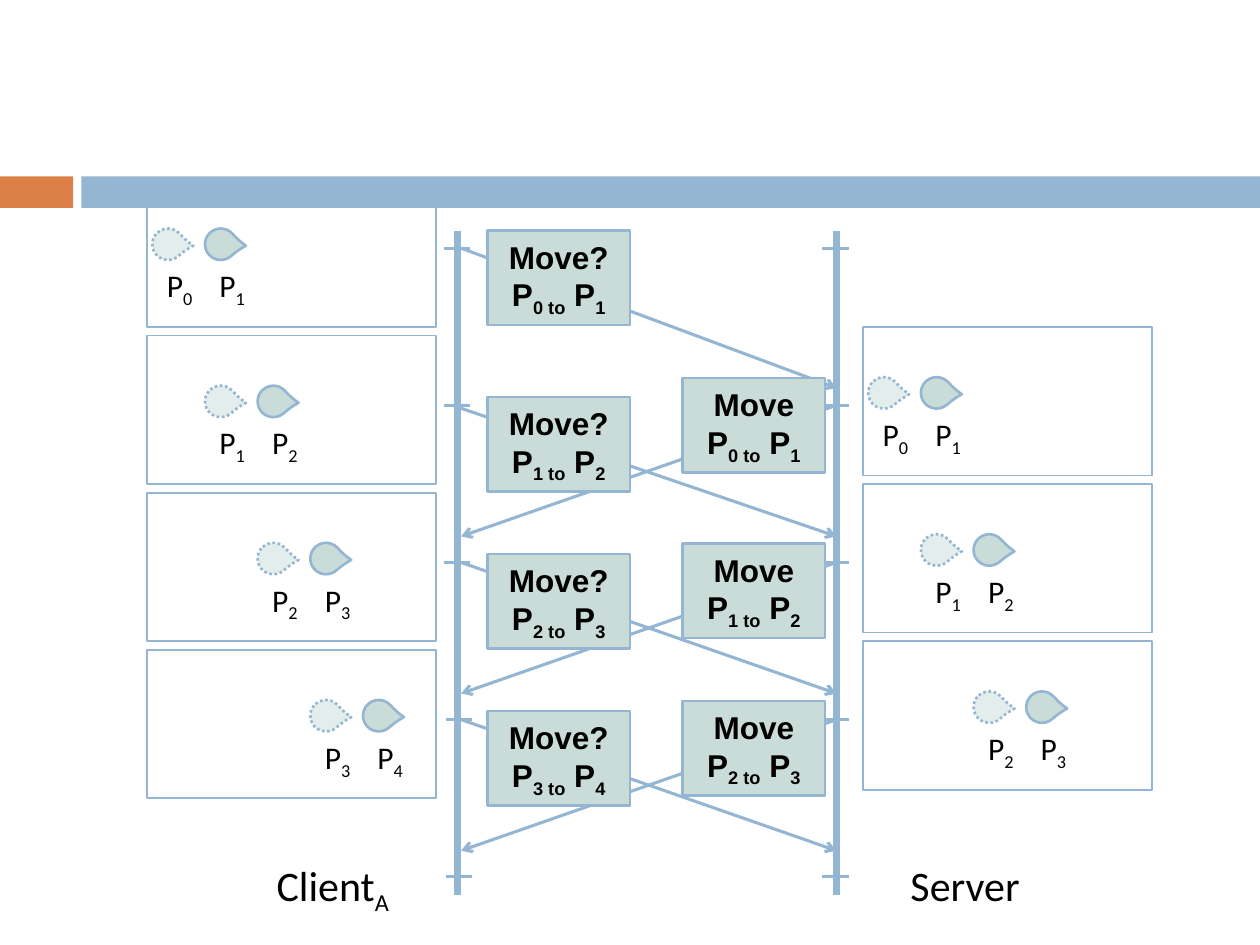
from lxml import etree
from pptx import Presentation
from pptx.dml.color import RGBColor
from pptx.enum.dml import MSO_LINE
from pptx.enum.shapes import MSO_CONNECTOR, MSO_SHAPE
from pptx.enum.text import MSO_ANCHOR, PP_ALIGN
from pptx.oxml.ns import qn
from pptx.util import Pt

RECTANGLE, TEARDROP = MSO_SHAPE.RECTANGLE, MSO_SHAPE.TEAR
STRAIGHT = MSO_CONNECTOR.STRAIGHT
DOTTED = MSO_LINE.ROUND_DOT
CENTER, MIDDLE = PP_ALIGN.CENTER, MSO_ANCHOR.MIDDLE

BLUE = RGBColor(0x94, 0xB6, 0xD2)
ORANGE = RGBColor(0xDD, 0x80, 0x47)
MINT = RGBColor(0xCA, 0xDC, 0xD8)
BLACK = RGBColor(0, 0, 0)

PITCH = 89.8          # time between two ticks
FIRST_TICK = 141.8
CLIENT_X, SERVER_X = 261.7, 478
STEP = 30.1           # distance of one move inside a panel

deck = Presentation()
deck.slide_width, deck.slide_height = Pt(720), Pt(540)
page = deck.slides.add_slide(deck.slide_layouts[6])


def write(para, parts, size, font, bold=False):
    """Write the parts in turn as normal text and subscript."""
    for index, part in enumerate(parts):
        span = para.add_run()
        span.text = part
        span.font.size, span.font.name = Pt(size), font
        span.font.bold, span.font.color.rgb = bold, BLACK
        if index % 2:
            span._r.get_or_add_rPr().set("baseline", "-25000")


def draw_line(x1, y1, x2, y2, width=1.75, arrow=False):
    line = page.shapes.add_connector(STRAIGHT, Pt(x1), Pt(y1), Pt(x2), Pt(y2))
    line.line.color.rgb, line.line.width = BLUE, Pt(width)
    if arrow:
        etree.SubElement(line.line._get_or_add_ln(), qn("a:tailEnd"), type="arrow")
    etree.SubElement(line._element.spPr, qn("a:effectLst"))


# Title bars
for left, width, color in ((0, 41.8, ORANGE), (46.5, 673.5, BLUE)):
    bar = page.shapes.add_shape(RECTANGLE, Pt(left), Pt(100.8), Pt(width), Pt(18))
    bar.shadow.inherit = False
    bar.fill.solid()
    bar.fill.fore_color.rgb = color
    bar.line.fill.background()

# Captions
for left, parts in ((135.4, ("Client", "A")), (496.8, ("Server",))):
    caption = page.shapes.add_textbox(Pt(left), Pt(487.4), Pt(109.4), Pt(36.7))
    caption.text_frame.word_wrap = True
    para = caption.text_frame.paragraphs[0]
    para.alignment = CENTER
    write(para, parts, 24, "Calibri")

# Time lines, each of two overlapping halves, with ticks
for x, tick_lefts in ((CLIENT_X, (253.7, 253.7, 253.7, 254.7, 254.7)),
                      (SERVER_X, (470,) * 5)):
    for top in (131.8, 311.8):
        draw_line(x, top, x, top + 199.4, width=4)
    for row, left in enumerate(tick_lefts):
        y = FIRST_TICK + row * PITCH
        draw_line(left, y, left + 15, y)

# Requests to the server and replies to the client
for row, (start, drop) in enumerate(((263.5, 79.9), (258.5, 74.9),
                                     (263.5, 74.9), (263.5, 74.9))):
    y = FIRST_TICK + row * PITCH
    draw_line(start, y, SERVER_X, y + drop, arrow=True)
for row in (1, 2, 3):
    y = FIRST_TICK + row * PITCH
    draw_line(SERVER_X, y, 263.5, y + 74.9, arrow=True)

# Message boxes
for word, left, tops in (("Move?", 278.6, (131.8, 226.8, 316.6, 406.3)),
                         ("Move", 390.1, (216, 310.7, 400.5))):
    for move, top in enumerate(tops):
        box = page.shapes.add_shape(RECTANGLE, Pt(left), Pt(top), Pt(81.4), Pt(54))
        box.shadow.inherit = False
        box.fill.solid()
        box.fill.fore_color.rgb = MINT
        box.line.color.rgb, box.line.width = BLUE, Pt(1.5)
        frame = box.text_frame
        frame.word_wrap, frame.vertical_anchor = True, MIDDLE
        lines = ((word,), ("P", f"{move} to", " P", f"{move + 1}"))
        for para, parts in zip((frame.paragraphs[0], frame.add_paragraph()), lines):
            para.alignment = CENTER
            write(para, parts, 18, "Arial", bold=True)

# Panels: old position dotted, new position solid
for left, first_top, count in ((84.1, 102, 4), (493.2, 186.9, 3)):
    for move in range(count):
        top = first_top + move * PITCH
        group = page.shapes.add_group_shape()
        panel = group.shapes.add_shape(RECTANGLE, Pt(left), Pt(top), Pt(165), Pt(84.8))
        panel.shadow.inherit = False
        panel.fill.background()
        panel.line.color.rgb, panel.line.width = BLUE, Pt(1)

        for place in (move + 1, move):
            x = left + 2.9 + place * STEP
            marker = group.shapes.add_shape(TEARDROP, Pt(x), Pt(top + 28.6), Pt(18), Pt(18))
            marker.shadow.inherit = False
            marker.adjustments[0] = 1.133
            marker.rotation = 48.2
            marker.fill.solid()
            marker.fill.fore_color.rgb = MINT
            marker.line.color.rgb, marker.line.width = BLUE, Pt(1.5)
            if place == move:
                marker.line.dash_style = DOTTED
                color = marker._element.spPr.find(qn("a:solidFill"))[0]
                etree.SubElement(color, qn("a:alpha"), val="51000")

            label = group.shapes.add_textbox(Pt(x + 1.2), Pt(top + 46.6), Pt(38), Pt(29))
            label.text_frame.word_wrap = True
            write(label.text_frame.paragraphs[0], ("P", f"{place}"), 18, "Calibri")

deck.save("out.pptx")
